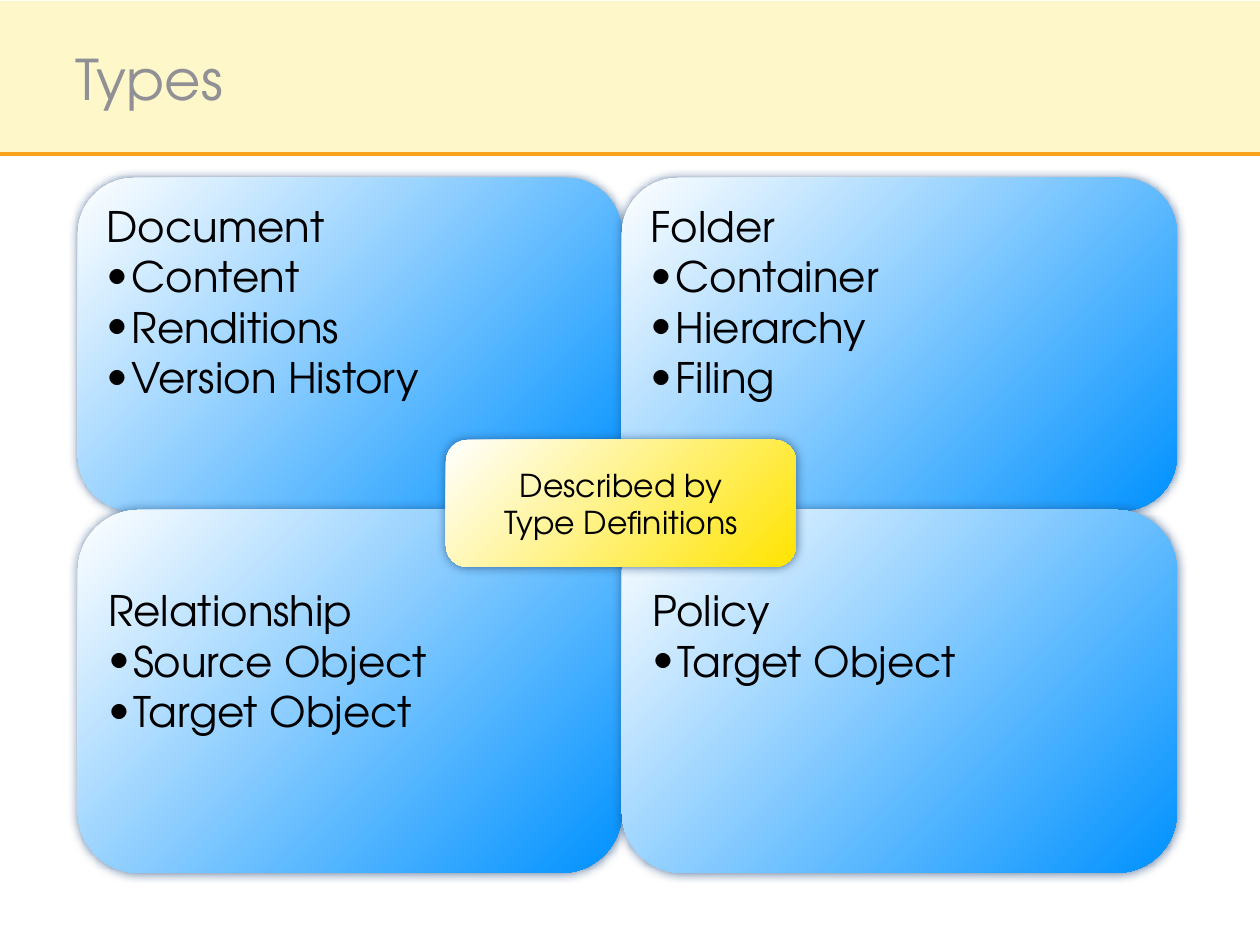
from dataclasses import dataclass
from lxml.etree import SubElement
from pptx import Presentation
from pptx.dml.color import RGBColor
from pptx.enum.shapes import MSO_CONNECTOR, MSO_SHAPE
from pptx.enum.text import MSO_ANCHOR, MSO_AUTO_SIZE, PP_ALIGN
from pptx.oxml.ns import qn
from pptx.util import Emu, Pt

SCALE = 914400 / 126


@dataclass(frozen=True)
class Theme:
    font: str = "TeX Gyre Adventor"
    ink: str = "000000"
    title: str = "919195"
    band: str = "FCEC74"
    rule: str = "F9A21B"
    white: str = "FFFFFF"
    blue: str = "0091FF"
    gold: str = "FFE400"
    glow: str = "1F497D"
    head: int = 32
    body: int = 24
    note: int = 18


@dataclass(frozen=True)
class Box:
    left: int
    top: int
    width: int
    height: int


@dataclass(frozen=True)
class Card:
    col: int
    row: int
    name: str
    items: tuple[str, ...]


THEME = Theme()
COLS = ((78, 544), (622, 555))
ROWS = ((178, 333), (510, 363))
INSETS = (6, 57)
INDENT = 25
CARDS = (
    Card(0, 0, "Document", ("Content", "Renditions", "Version History")),
    Card(1, 0, "Folder", ("Container", "Hierarchy", "Filing")),
    Card(0, 1, "Relationship", ("Source Object", "Target Object")),
    Card(1, 1, "Policy", ("Target Object",)),
)


def px(count: int) -> Emu:
    return Emu(round(count * SCALE))


def rgb(code: str) -> RGBColor:
    return RGBColor.from_string(code)


def place(box: Box) -> tuple[Emu, ...]:
    return px(box.left), px(box.top), px(box.width), px(box.height)


def style(para, size: int, color: str, align=PP_ALIGN.LEFT) -> None:
    para.alignment = align
    for run in para.runs:
        run.font.name = THEME.font
        run.font.size = Pt(size)
        run.font.color.rgb = rgb(color)


def bullet(para) -> None:
    props = para._p.get_or_add_pPr()
    props.set("marL", str(px(INDENT)))
    props.set("indent", str(-px(INDENT)))
    SubElement(props, qn("a:buFont"), typeface=THEME.font)
    SubElement(props, qn("a:buChar"), char="•")


def glow(shape) -> None:
    shape.shadow.inherit = False
    effects = shape._element.spPr.find(qn("a:effectLst"))
    outer = SubElement(effects, qn("a:outerShdw"), blurRad=str(Pt(6)),
                       dist="0", dir="0", algn="ctr", rotWithShape="0")
    color = SubElement(outer, qn("a:srgbClr"), val=THEME.glow)
    SubElement(color, qn("a:alpha"), val="75000")


def panel(slide, box: Box, color: str, text: str):
    shape = slide.shapes.add_shape(MSO_SHAPE.ROUNDED_RECTANGLE, *place(box))
    shape.adjustments[0] = 0.167
    shape.line.fill.background()
    shape.fill.gradient()
    shape.fill.gradient_angle = 315
    for stop, code in zip(shape.fill.gradient_stops, (THEME.white, color)):
        stop.color.rgb = rgb(code)
    glow(shape)
    frame = shape.text_frame
    frame.word_wrap = True
    frame.text = text
    return frame


def draw(slide, card: Card) -> None:
    left, width = COLS[card.col]
    top, height = ROWS[card.row]
    text = "\n".join((card.name, *card.items))
    frame = panel(slide, Box(left, top, width, height), THEME.blue, text)
    frame.vertical_anchor = MSO_ANCHOR.TOP
    frame.margin_top = px(INSETS[card.row])
    for spot, para in enumerate(frame.paragraphs):
        if spot:
            bullet(para)
        style(para, THEME.body, THEME.ink)


def badge(slide) -> None:
    frame = panel(slide, Box(446, 440, 350, 127), THEME.gold,
                  "Described by\nType Definitions")
    frame.vertical_anchor = MSO_ANCHOR.MIDDLE
    for para in frame.paragraphs:
        style(para, THEME.note, THEME.ink, PP_ALIGN.CENTER)


def header(slide) -> None:
    band = slide.shapes.add_shape(MSO_SHAPE.RECTANGLE, *place(Box(0, 1, 1260, 153)))
    band.shadow.inherit = False
    band.line.fill.background()
    band.fill.solid()
    band.fill.fore_color.rgb = rgb(THEME.band)
    color = band._element.spPr.find(qn("a:solidFill"))[0]
    SubElement(color, qn("a:alpha"), val="38000")

    rule = slide.shapes.add_connector(MSO_CONNECTOR.STRAIGHT, 0, px(154), px(1260), px(154))
    rule.line.color.rgb = rgb(THEME.rule)
    rule.line.width = Pt(2)
    SubElement(rule._element.spPr, qn("a:effectLst"))

    title = slide.shapes.title
    title.left, title.top, title.width, title.height = place(Box(63, 20, 1134, 116))
    frame = title.text_frame
    frame.text = "Types"
    frame.auto_size = MSO_AUTO_SIZE.NONE
    frame.vertical_anchor = MSO_ANCHOR.MIDDLE
    style(frame.paragraphs[0], THEME.head, THEME.title)
    slide.shapes._spTree.append(title._element)


def main() -> None:
    deck = Presentation()
    deck.slide_width, deck.slide_height = px(1260), px(945)
    slide = deck.slides.add_slide(deck.slide_layouts[5])
    header(slide)
    for card in CARDS:
        draw(slide, card)
    badge(slide)
    deck.save("out.pptx")


if __name__ == "__main__":
    main()
